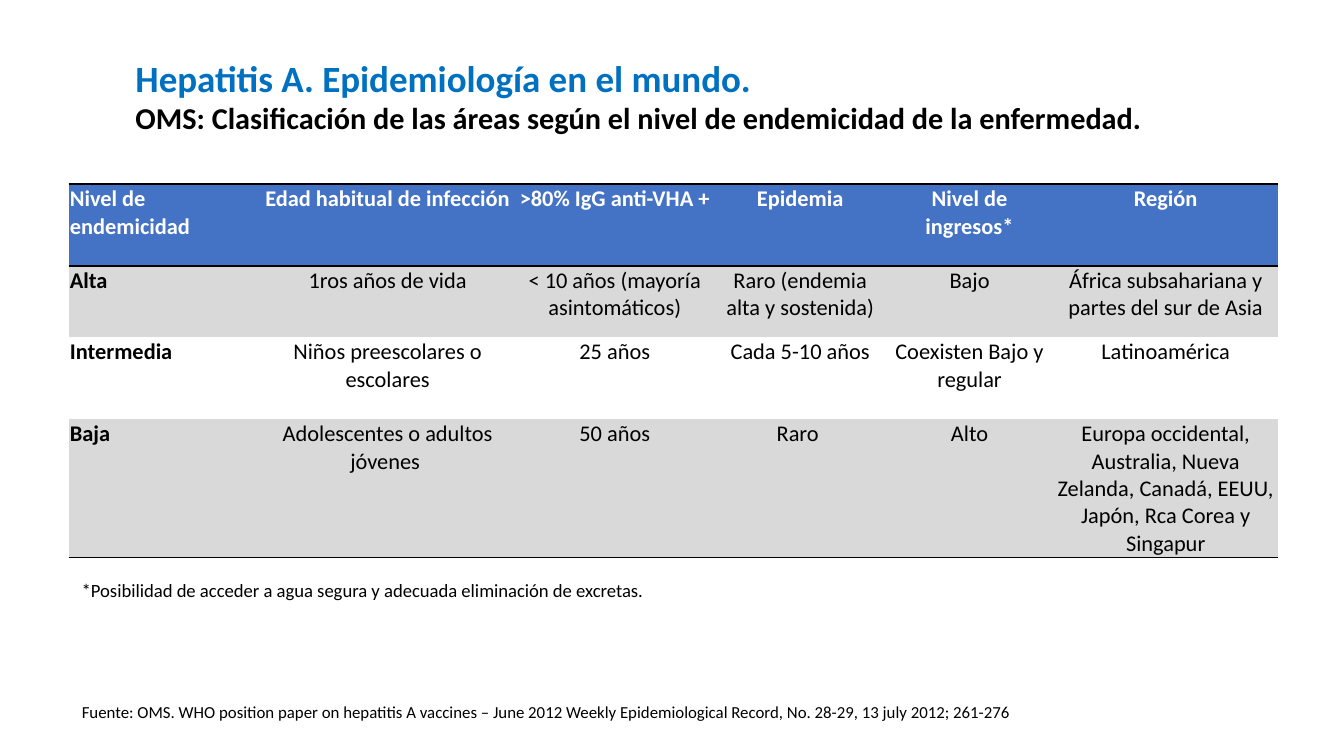
from lxml import etree
from pptx import Presentation
from pptx import util as u
from pptx.dml.color import RGBColor
from pptx.enum import text

BLUE = RGBColor(0x00, 0x70, 0xC0)
HEAD = RGBColor(0x44, 0x72, 0xC4)
GREY = RGBColor(0xD9, 0xD9, 0xD9)
BLACK = RGBColor(0, 0, 0)
WHITE = RGBColor(255, 255, 255)
NS = "http://schemas.openxmlformats.org/drawingml/2006/main"

# Wide 16:9 slide on a square grid, one hundred units across
deck = Presentation()
deck.slide_width = u.Inches(10)
deck.slide_height = deck.slide_width * 9 // 16
slide = deck.slides.add_slide(deck.slide_layouts[6])
UNIT = deck.slide_width // 100
LEFT = 5.1


def add_box(left, top, width, height, words, looks):
    box = slide.shapes.add_textbox(*(int(n * UNIT) for n in (left, top, width, height)))
    frame = box.text_frame
    frame.word_wrap = True
    frame.text = words
    style(frame.paragraphs[0], looks)
    return frame


def style(par, looks):
    for run, (size, color, bold) in zip(par.runs, looks):
        run.font.name = "Calibri"
        run.font.size = u.Pt(size)
        run.font.bold = bold
        run.font.color.rgb = color


# Title in two lines
title = add_box(
    9.1, 3.7, 85, 9.4,
    "Hepatitis A. Epidemiología en el mundo. \v"
    "OMS: Clasificación de las áreas según el nivel de endemicidad de la enfermedad.",
    [(19.8, BLUE, True), (16.2, BLACK, True)])
title.margin_top = u.Inches(0.04)

# Table of endemicity levels
DATA = [
    ["Nivel de endemicidad", "Edad habitual de infección", ">80% IgG anti-VHA +",
     "Epidemia", "Nivel de ingresos*", "Región"],
    ["Alta", "1ros años de vida", "< 10 años (mayoría asintomáticos)",
     "Raro (endemia alta y sostenida)", "Bajo",
     "África subsahariana y partes del sur de Asia"],
    ["Intermedia", "Niños preescolares o escolares", "25 años",
     "Cada 5-10 años", "Coexisten Bajo y regular", "Latinoamérica"],
    ["Baja", "Adolescentes o adultos jóvenes ", "50 años", "Raro ", "Alto",
     "Europa occidental, Australia, Nueva Zelanda, Canadá, EEUU, Japón, Rca Corea y Singapur"],
]
COLS = [14.3, 18.9, 14.9, 12.7, 12.5, 16.7]
ROWS = [6.1, 5.3, 6.1, 10.3]
FILLS = [HEAD, GREY, None, GREY]
RULES = {0, 1, len(ROWS)}  # row edges that carry a line

table = slide.shapes.add_table(
    len(ROWS), len(COLS),
    *(int(n * UNIT) for n in (LEFT, 13.7, sum(COLS), sum(ROWS)))).table
table.horz_banding = False
for col, width in zip(table.columns, COLS):
    col.width = int(width * UNIT)
for r, (row, height) in enumerate(zip(table.rows, ROWS)):
    row.height = int(height * UNIT)
    for c, cell in enumerate(row.cells):
        cell.text_frame.text = DATA[r][c]
        cell.margin_left = cell.margin_right = cell.margin_top = u.Inches(0.01)
        cell.margin_bottom = 0
        par = cell.text_frame.paragraphs[0]
        par.alignment = text.PP_ALIGN.CENTER if c else text.PP_ALIGN.LEFT
        style(par, [(12, BLACK if r else WHITE, r == 0 or c == 0)])
        # Cell borders
        for side, drawn in (("lnL", False), ("lnR", False),
                            ("lnT", r in RULES), ("lnB", r + 1 in RULES)):
            line = etree.SubElement(cell._tc.get_or_add_tcPr(), f"{{{NS}}}{side}",
                                    w=str(u.Pt(1) if drawn else 0))
            fill = etree.SubElement(line, f"{{{NS}}}{'solidFill' if drawn else 'noFill'}")
            if drawn:
                etree.SubElement(fill, f"{{{NS}}}srgbClr", val=str(BLACK))
        if FILLS[r]:
            cell.fill.solid()
            cell.fill.fore_color.rgb = FILLS[r]
        else:
            cell.fill.background()

# Source and footnote
add_box(LEFT, 51.7, 73.2, 2.5,
        "Fuente: OMS. WHO position paper on hepatitis A vaccines – June 2012 "
        "Weekly Epidemiological Record, No. 28-29, 13 july 2012; 261-276",
        [(9, BLACK, False)])
add_box(LEFT, 42.6, 50, 2.7,
        "*Posibilidad de acceder a agua segura y adecuada eliminación de excretas.",
        [(10, BLACK, False)])

deck.save("out.pptx")
